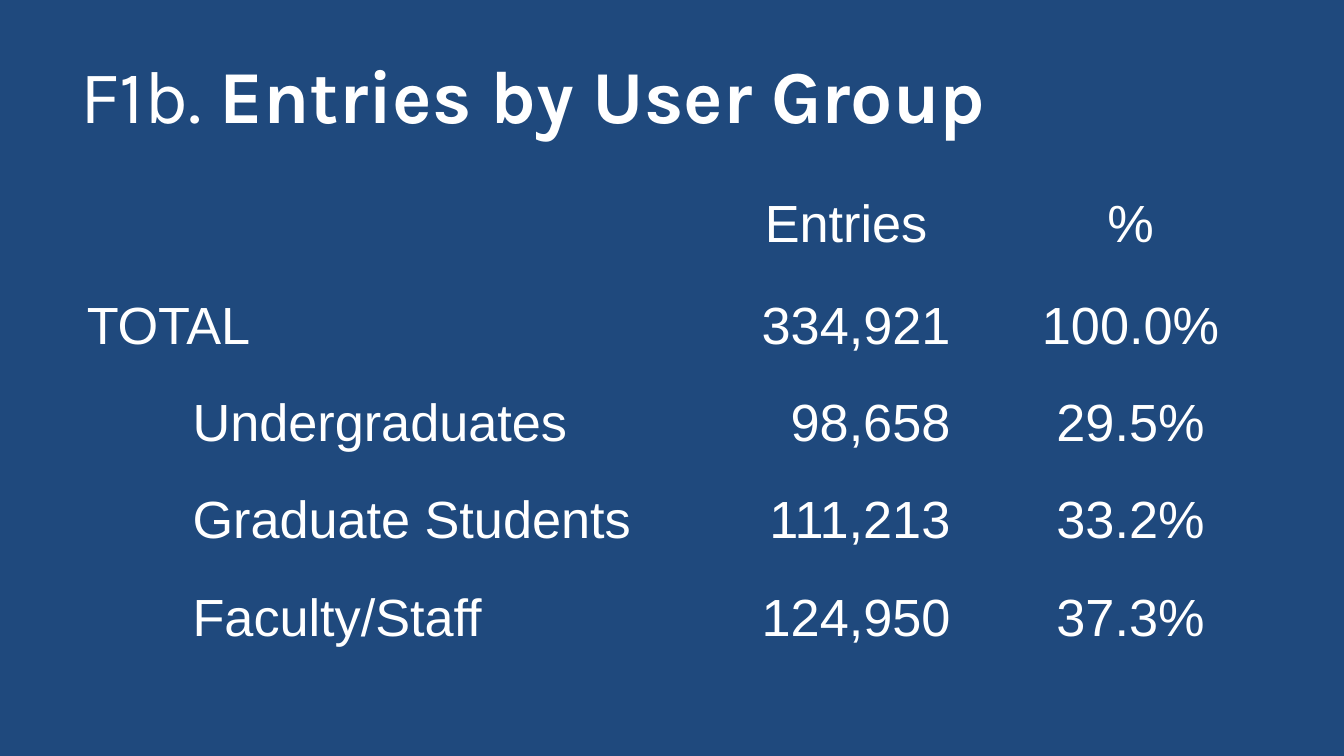
from pptx import Presentation
from pptx.dml.color import RGBColor
from pptx.enum.text import MSO_ANCHOR, PP_ALIGN
from pptx.util import Cm, Pt

LEFT, CENTER, RIGHT = PP_ALIGN.LEFT, PP_ALIGN.CENTER, PP_ALIGN.RIGHT
MIDDLE, TOP = MSO_ANCHOR.MIDDLE, MSO_ANCHOR.TOP

# Content
TITLE = [("F1b. ", False), ("Entries by User Group", True)]
HEADER = ("", "Entries", "%")
ROWS = [
    ("TOTAL", "334,921", "100.0%"),
    ("Undergraduates", "98,658", "29.5%"),
    ("Graduate Students", "111,213", "33.2%"),
    ("Faculty/Staff", "124,950", "37.3%"),
]

THEME = {
    "background": RGBColor(0x1F, 0x49, 0x7D),
    "text": RGBColor(0xFF, 0xFF, 0xFF),
    "title_font": "Karla",
    "title_size": Pt(40),
    "body_font": "Arial",
    "body_size": Pt(28),
}
PLAIN_TABLE = "{2D5ABB26-0587-4C30-8999-92F81FD0307C}"  # no style, no grid

# Layout, in cm
MARGIN, WIDTH = 1.27, 22.86
COLUMNS = (11.56, 5.77, 5.53)
HEADER_HEIGHT, ROW_HEIGHT = 1.91, 1.83
PAD, NUMBER_PAD, GROUP_INDENT, HEADER_SHIFT = 0.37, 0.64, 2.0, 0.55


def add_text(p, text, font="body_font", size="body_size", bold=False, align=LEFT):
    p.alignment = align
    r = p.add_run()
    r.text = text
    r.font.name = THEME[font]
    r.font.size = THEME[size]
    r.font.bold = bold
    r.font.color.rgb = THEME["text"]


def fill_cell(cell, text, align, left=PAD, right=PAD):
    cell.fill.background()
    cell.vertical_anchor = TOP
    cell.margin_left, cell.margin_right = Cm(left), Cm(right)
    cell.margin_top = cell.margin_bottom = Cm(PAD)
    if text:
        add_text(cell.text_frame.paragraphs[0], text, align=align)


prs = Presentation()
prs.slide_width, prs.slide_height = Cm(25.4), Cm(14.29)
s = prs.slides.add_slide(prs.slide_layouts[5])
s.background.fill.solid()
s.background.fill.fore_color.rgb = THEME["background"]

# Title
title = s.shapes.title
title.left, title.top = Cm(MARGIN), Cm(0.58)
title.width, title.height = Cm(WIDTH), Cm(2.39)
title.text_frame.vertical_anchor = MIDDLE
for text, bold in TITLE:
    add_text(title.text_frame.paragraphs[0], text, "title_font", "title_size", bold)

# Table
heights = [HEADER_HEIGHT] + [ROW_HEIGHT] * len(ROWS)
frame = s.shapes.add_table(len(heights), len(COLUMNS), Cm(MARGIN), Cm(3.33),
                           Cm(WIDTH), Cm(sum(heights)))
table = frame.table
table.first_row = table.horz_banding = False
table._tbl.tblPr.find("{*}tableStyleId").text = PLAIN_TABLE
for column, width in zip(table.columns, COLUMNS):
    column.width = Cm(width)
for row, height in zip(table.rows, heights):
    row.height = Cm(height)

for i, (group, entries, share) in enumerate([HEADER] + ROWS):
    group_cell, entries_cell, share_cell = table.rows[i].cells
    # User groups sit indented below the total
    fill_cell(group_cell, group, LEFT, left=PAD + (GROUP_INDENT if i > 1 else 0))
    if i == 0:
        fill_cell(entries_cell, entries, CENTER, left=PAD + HEADER_SHIFT)
    else:
        fill_cell(entries_cell, entries, RIGHT, right=NUMBER_PAD)
    fill_cell(share_cell, share, CENTER)

prs.save("out.pptx")
